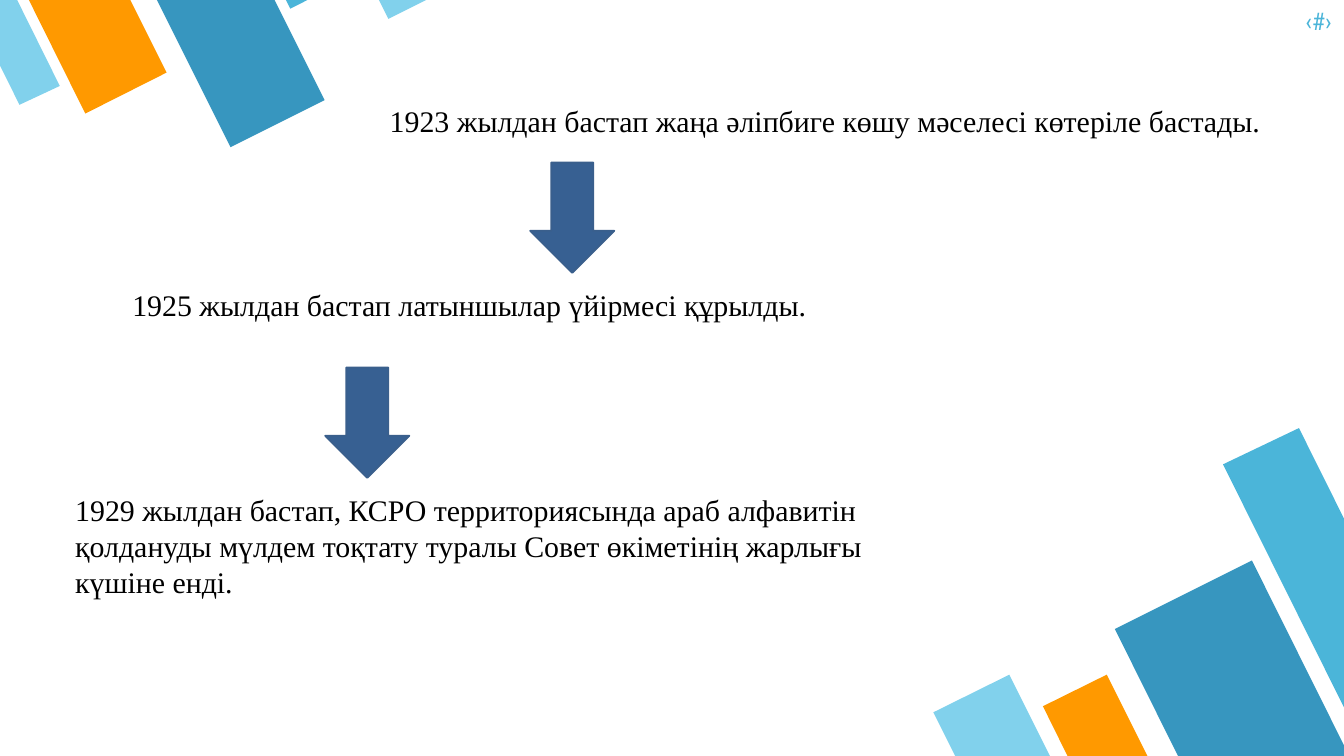
from pptx import Presentation
from pptx.dml.color import RGBColor
from pptx.enum.shapes import MSO_SHAPE
from pptx.enum.text import PP_ALIGN
from pptx.util import Inches, Pt

DOWN_ARROW = MSO_SHAPE.DOWN_ARROW
LEFT, RIGHT = PP_ALIGN.LEFT, PP_ALIGN.RIGHT

THEME = {
    "pale": RGBColor(0x81, 0xD1, 0xEC),
    "sky": RGBColor(0x4B, 0xB5, 0xD9),
    "blue": RGBColor(0x37, 0x96, 0xBF),
    "orange": RGBColor(0xFF, 0x99, 0x00),
    "arrow": RGBColor(0x37, 0x60, 0x92),
    "arrow_edge": RGBColor(0x3A, 0x5F, 0x8C),
    "text": RGBColor(0, 0, 0),
    "body_font": "Times New Roman",
    "body_size": Pt(32),
    "number_font": "Roboto Condensed",
    "number_size": Pt(26),
}

prs = Presentation()
prs.slide_width, prs.slide_height = Inches(20), Inches(11.25)
slide = prs.slides.add_slide(prs.slide_layouts[6])


def add_text(text, box, font_name, size, color, wrap=True, align=LEFT):
    frame = slide.shapes.add_textbox(*map(Inches, box)).text_frame
    frame.word_wrap = wrap
    paragraph = frame.paragraphs[0]
    paragraph.text = text
    paragraph.alignment = align
    paragraph.font.name = font_name
    paragraph.font.size = size
    paragraph.font.color.rgb = color
    return frame


# Slanted stripes: bottom right corner, then top left corner
stripes = [
    ("pale", [(15.01, 12.84), (16.42, 12.84), (15.02, 10.04), (13.89, 10.6)]),
    ("blue", [(18.61, 13.42), (21.16, 13.42), (18.63, 8.34), (16.59, 9.36)]),
    ("orange", [(16.46, 12.41), (17.65, 12.4), (16.47, 10.04), (15.52, 10.51)]),
    ("sky", [(19.33, 6.37), (18.2, 6.91), (20.43, 11.39), (20.43, 8.58)]),
    ("sky", [(4.33, -1.29), (3.62, -1.29), (4.32, 0.13), (4.89, -0.16)]),
    ("orange", [(1.28, -1.32), (-0.22, -1.31), (1.27, 1.69), (2.48, 1.08)]),
    ("blue", [(3.44, -1.29), (1.69, -1.29), (3.43, 2.19), (4.83, 1.49)]),
    ("pale", [(5.79, -1.31), (4.99, -1.3), (5.78, 0.28), (6.42, -0.04)]),
    ("pale", [(0.29, 1.56), (0.89, 1.28), (-0.29, -1.1), (-0.29, 0.39)]),
]
for color, corners in stripes:
    start, *others = [(Inches(x), Inches(y)) for x, y in corners]
    builder = slide.shapes.build_freeform(*start)
    builder.add_line_segments(others, close=True)
    stripe = builder.convert_to_shape()
    stripe.shadow.inherit = False
    stripe.fill.solid()
    stripe.fill.fore_color.rgb = THEME[color]
    stripe.line.fill.background()

# Slide number mark
number = add_text("‹#›", (18.82, 0.09, 1, 0.67), THEME["number_font"],
                  THEME["number_size"], THEME["sky"], align=RIGHT)
number.margin_left = number.margin_right = 0
number.margin_top = number.margin_bottom = 0
number.paragraphs[0].line_spacing = Pt(31.2)

# Events, from the earliest to the latest
events = [
    ("1923 жылдан бастап жаңа әліпбиге көшу мәселесі көтеріле бастады.",
     (5.7, 1.48, 13.18, 0.64), False),
    ("1925 жылдан бастап латыншылар үйірмесі құрылды.",
     (1.87, 4.22, 10.35, 0.64), False),
    ("1929 жылдан бастап, КСРО территориясында араб алфавитін қолдануды "
     "мүлдем тоқтату туралы Совет өкіметінің жарлығы күшіне енді.",
     (1.02, 7.27, 12.97, 1.72), True),
]
for event, box, wrap in events:
    add_text(event, box, THEME["body_font"], THEME["body_size"],
             THEME["text"], wrap)

# Arrows between the events
for left, top in [(7.89, 2.42), (4.84, 5.47)]:
    arrow = slide.shapes.add_shape(DOWN_ARROW, Inches(left), Inches(top),
                                   Inches(1.25), Inches(1.64))
    arrow.shadow.inherit = False
    arrow.fill.solid()
    arrow.fill.fore_color.rgb = THEME["arrow"]
    arrow.line.color.rgb = THEME["arrow_edge"]
    arrow.line.width = Pt(2)

prs.save("out.pptx")
